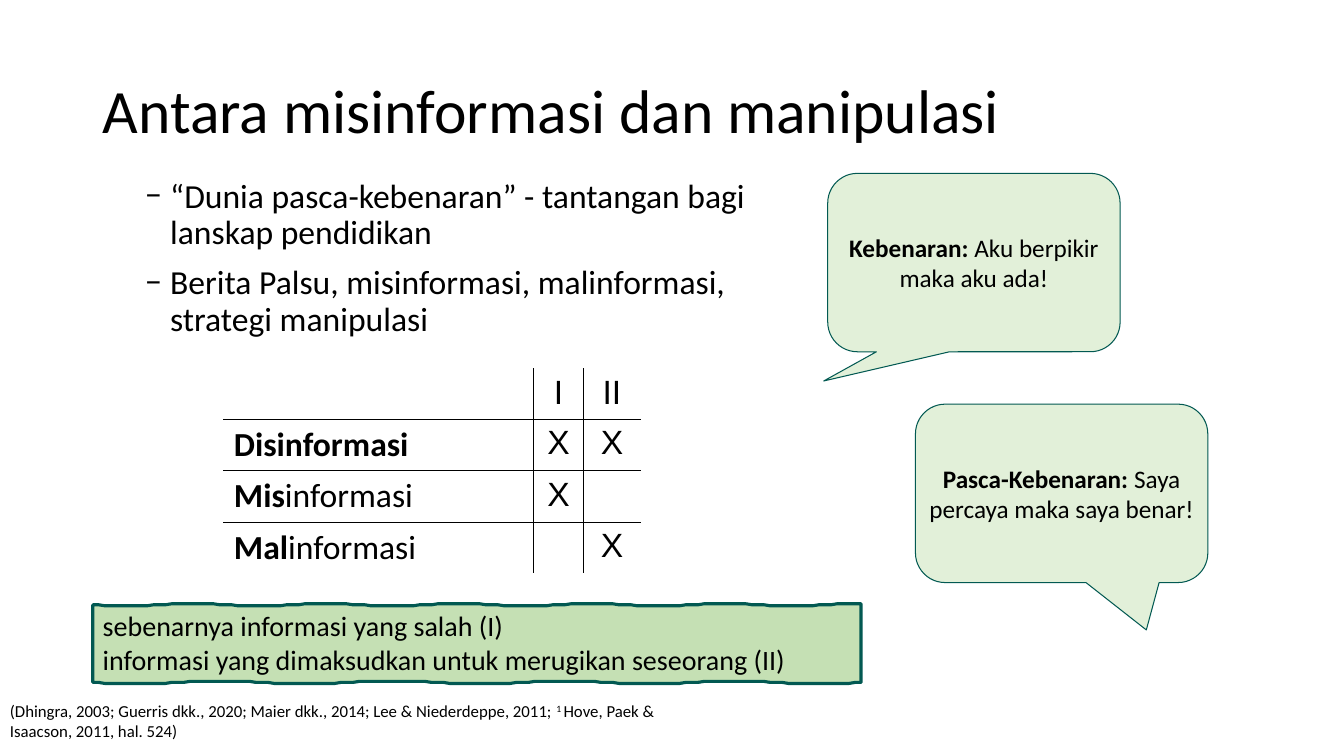
import math

import pptx
import pptx.dml.color
import pptx.enum.shapes
import pptx.enum.text
import pptx.oxml
import pptx.oxml.ns
import pptx.util

PX = 9144  # EMU per px, 100 px to the inch
BLACK, WHITE, TEAL = "000000", "FFFFFF", "025952"
BAND_GREEN, BUBBLE_GREEN = "C5E0B4", "E2F0D9"
ALIGN = pptx.enum.text.PP_ALIGN
ANCHOR = pptx.enum.text.MSO_ANCHOR

TITLE = "Antara misinformasi dan manipulasi"
BULLETS = [
    "“Dunia pasca-kebenaran” - tantangan bagi lanskap pendidikan",
    "Berita Palsu, misinformasi, malinformasi, strategi manipulasi",
]
# Bold start of the row label, rest of the label, marks for columns I and II
TABLE_ROWS = [
    ("", "", "I", "II"),
    ("Disinformasi", "", "X", "X"),
    ("Mis", "informasi", "X", ""),
    ("Mal", "informasi", "", "X"),
]
COL_WIDTHS = [307, 50, 56]
ROW_HEIGHTS = [47, 51, 51, 51]
LEGEND = [
    "sebenarnya informasi yang salah (I)",
    "informasi yang dimaksudkan untuk merugikan seseorang (II)",
]
SOURCES = ("(Dhingra, 2003; Guerris dkk., 2020; Maier dkk., 2014; "
           "Lee & Niederdeppe, 2011; ")


def px(n):
    return pptx.util.Emu(round(n * PX))


def rgb(color):
    return pptx.dml.color.RGBColor.from_string(color)


def style_run(r, size, name="Calibri", bold=False):
    r.font.size = pptx.util.Pt(size)
    r.font.name = name
    r.font.bold = bold
    r.font.color.rgb = rgb(BLACK)


def add_run(p, text, size, name="Calibri", bold=False):
    r = p.add_run()
    r.text = text
    style_run(r, size, name, bold)
    return r


def fill_lines(tf, lines, size):
    """Put one paragraph per line into the frame."""
    tf.word_wrap = True
    tf.text = "\n".join(lines)
    for p in tf.paragraphs:
        p.alignment = ALIGN.LEFT
        for r in p.runs:
            style_run(r, size)


def paint(sp, fill, line, width):
    sp.shadow.inherit = False
    sp.fill.solid()
    sp.fill.fore_color.rgb = rgb(fill)
    sp.line.color.rgb = rgb(line)
    sp.line.width = pptx.util.Pt(width)


def set_title(s):
    sp = s.shapes.title
    sp.left, sp.top, sp.width, sp.height = map(px, (92, 40, 1150, 145))
    tf = sp.text_frame
    fill_lines(tf, [TITLE], 44)
    tf.vertical_anchor = ANCHOR.MIDDLE
    tf.paragraphs[0].line_spacing = 0.9


def add_bullets(s, x, y, w, h):
    tf = s.shapes.add_textbox(px(x), px(y), px(w), px(h)).text_frame
    fill_lines(tf, BULLETS, 24)
    for i, p in enumerate(tf.paragraphs):
        p.line_spacing = 0.9
        p.space_before = pptx.util.Pt(10 if i else 0)
        ppr = p._p.get_or_add_pPr()
        ppr.set("marL", str(px(25)))
        ppr.set("indent", str(-px(25)))
        ns = pptx.oxml.ns.nsdecls("a")
        ppr.append(pptx.oxml.parse_xml(f'<a:buFont {ns} typeface="Calibri"/>'))
        ppr.append(pptx.oxml.parse_xml(f'<a:buChar {ns} char="−"/>'))


def set_borders(cell, **colors):
    """Colour the cell's edges, given in the order lnL, lnR, lnT, lnB."""
    tcpr = cell._tc.get_or_add_tcPr()
    for i, (edge, color) in enumerate(colors.items()):
        tcpr.insert(i, pptx.oxml.parse_xml(
            f'<a:{edge} {pptx.oxml.ns.nsdecls("a")} w="12192"><a:solidFill>'
            f'<a:srgbClr val="{color}"/></a:solidFill></a:{edge}>'))


def add_marks_table(s, x, y):
    rows, cols = len(ROW_HEIGHTS), len(COL_WIDTHS)
    table = s.shapes.add_table(rows, cols, px(x), px(y), px(sum(COL_WIDTHS)),
                               px(sum(ROW_HEIGHTS))).table
    table.first_row = table.horz_banding = False
    for col, w in zip(table.columns, COL_WIDTHS):
        col.width = px(w)
    for row, h in zip(table.rows, ROW_HEIGHTS):
        row.height = px(h)
    for i, (stem, ending, *marks) in enumerate(TABLE_ROWS):
        for j in range(cols):
            cell = table.cell(i, j)
            cell.fill.background()
            set_borders(cell,
                        lnL=BLACK if j else WHITE,
                        lnR=BLACK if j < cols - 1 else WHITE,
                        lnT=BLACK if i else WHITE,
                        lnB=BLACK if i < rows - 1 else WHITE)
            p = cell.text_frame.paragraphs[0]
            if j:
                p.alignment = ALIGN.CENTER
                parts = [(marks[j - 1], "Arial", False)]
            else:
                parts = [(stem, "Calibri", True), (ending, "Calibri", False)]
            for text, name, bold in parts:
                if text:
                    add_run(p, text, 24, name, bold)


def add_legend_band(s, x, y, w, h):
    """Rectangle with hand-drawn, wavy long edges."""
    steps = range(0, w + 1, 6)
    top = [(x + d, y + 1.5 * math.sin(d / 21)) for d in steps]
    bottom = [(x + d, y + h + 1.5 * math.sin(d / 27)) for d in reversed(steps)]
    fb = s.shapes.build_freeform(*top[0], scale=PX)
    fb.add_line_segments(top[1:] + bottom, close=True)
    sp = fb.convert_to_shape()
    paint(sp, BAND_GREEN, TEAL, 2.25)
    fill_lines(sp.text_frame, LEGEND, 20)
    sp.text_frame.vertical_anchor = ANCHOR.TOP


def add_bubble(s, x, y, tip, heading, text):
    w, h = 290, 177
    kind = pptx.enum.shapes.MSO_SHAPE.ROUNDED_RECTANGULAR_CALLOUT
    sp = s.shapes.add_shape(kind, px(x), px(y), px(w), px(h))
    sp.adjustments[0] = (tip[0] - x) / w - 0.5
    sp.adjustments[1] = (tip[1] - y) / h - 0.5
    paint(sp, BUBBLE_GREEN, TEAL, 0.75)
    tf = sp.text_frame
    tf.word_wrap = True
    tf.margin_left = tf.margin_right = px(1)
    tf.vertical_anchor = ANCHOR.MIDDLE
    p = tf.paragraphs[0]
    p.alignment = ALIGN.CENTER
    add_run(p, heading + " ", 18, bold=True)
    add_run(p, text, 18)


def add_sources(s, x, y, w, h):
    tf = s.shapes.add_textbox(px(x), px(y), px(w), px(h)).text_frame
    tf.word_wrap = True
    p = tf.paragraphs[0]
    add_run(p, SOURCES, 12)
    mark = add_run(p, "1 ", 12)
    mark.font._element.set("baseline", "30000")
    add_run(p, "Hove, Paek & Isaacson, 2011, hal. 524)", 12)


def main():
    prs = pptx.Presentation()
    prs.slide_width, prs.slide_height = px(1333), px(750)
    s = prs.slides.add_slide(prs.slide_layouts[5])
    set_title(s)
    add_bullets(s, 134, 173, 617, 180)
    add_sources(s, 0, 690, 693, 40)
    add_marks_table(s, 222, 366)
    add_legend_band(s, 92, 600, 762, 77)
    add_bubble(s, 821, 172, (817, 378), "Kebenaran:", "Aku berpikir maka aku ada!")
    add_bubble(s, 908, 401, (1137, 625), "Pasca-Kebenaran:",
               "Saya percaya maka saya benar!")
    prs.save("out.pptx")


if __name__ == "__main__":
    main()
